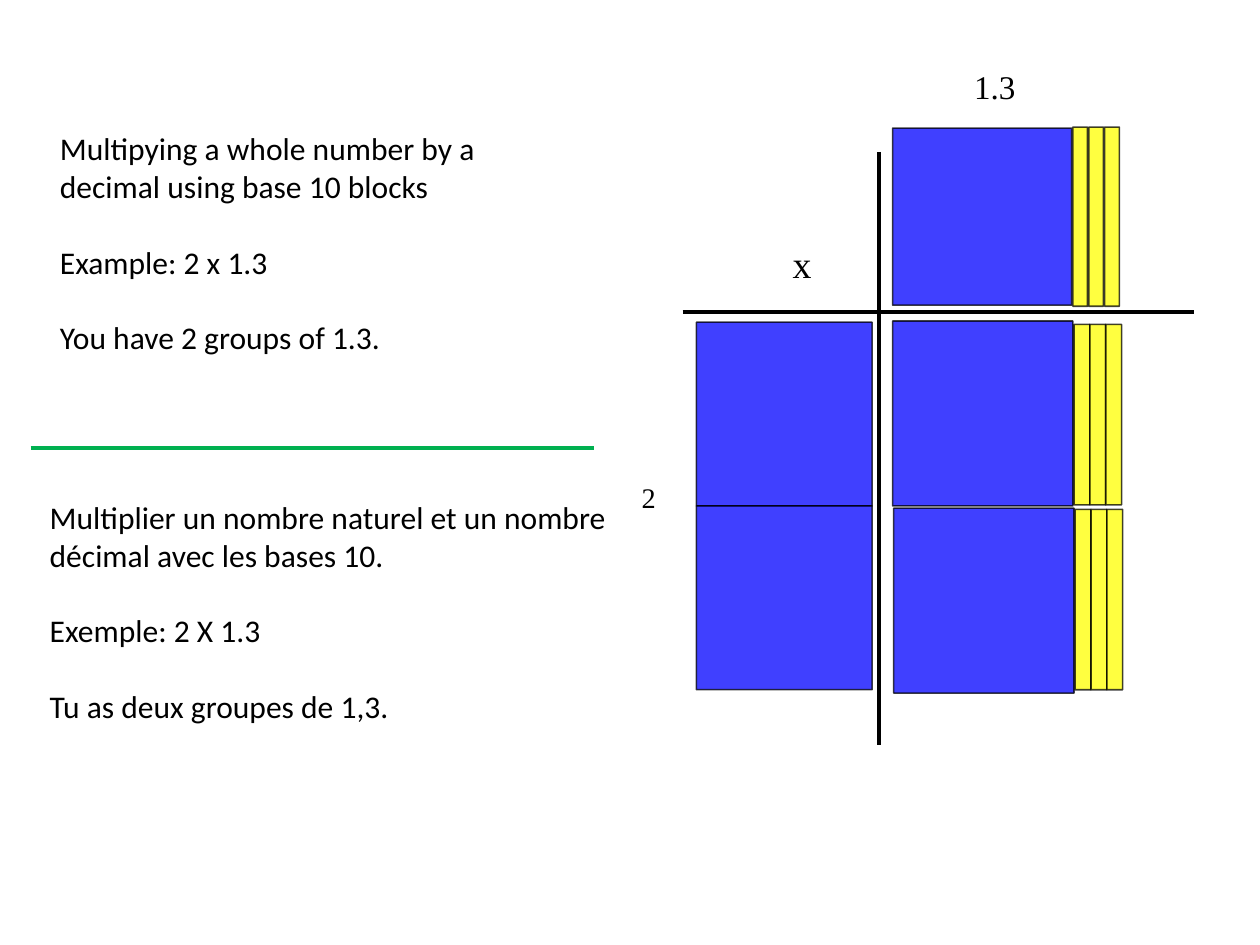
from pptx import Presentation
from pptx.dml.color import RGBColor
from pptx.enum.shapes import MSO_CONNECTOR, MSO_SHAPE
from pptx.oxml.ns import qn
from pptx.util import Inches, Pt
from lxml.etree import SubElement

# Content: left, top, width, height, size, font, paragraphs
TEXTS = [
    (0.43, 1.09, 4.44, 2.46, 20, "Calibri", [
        "Multipying a whole number by a decimal using base 10 blocks",
        "Example: 2 x 1.3",
        "You have 2 groups of 1.3."]),
    (0.34, 4.34, 5.56, 2.12, 20, "Calibri", [
        "Multiplier un nombre naturel et un nombre décimal avec les bases 10.",
        "Exemple: 2 X 1.3",
        "Tu as deux groupes de 1,3."]),
    (6.89, 2.07, 0.97, 0.5, 24, "Times New Roman", ["x"]),
    (8.49, 0.54, 1.22, 0.45, 21, "Times New Roman", ["1.3"]),
    (5.56, 4.18, 0.78, 0.4, 18, "Times New Roman", ["2"]),
]
# Lines: start x, start y, end x, end y, colour
LINES = [
    (6.02, 2.75, 10.53, 2.75, "000000"),
    (7.75, 1.34, 7.75, 6.57, "000000"),
    (0.27, 3.95, 5.24, 3.95, "00B050"),
]
# Blocks: left, top, width, height
ONES = [
    (7.87, 1.13, 1.58, 1.56),
    (6.14, 2.84, 1.55, 1.62),
    (6.14, 4.46, 1.55, 1.62),
    (7.87, 2.83, 1.59, 1.63),
    (7.88, 4.48, 1.59, 1.63),
]
# First rod of each group of tenths
TENTHS = [
    (9.46, 1.12, 0.13, 1.58),
    (9.47, 2.86, 0.14, 1.59),
    (9.48, 4.49, 0.14, 1.59),
]
RODS, STEP = 3, 0.14
BLUE, YELLOW, BLACK = "0000FF", "FFFF00", "000000"
ALPHA = "75000"

deck = Presentation()
deck.slide_width, deck.slide_height = Inches(11.11), Inches(8.33)
slide = deck.slides.add_slide(deck.slide_layouts[6])
shapes = slide.shapes


def paint(form, hue, alpha=None):
    form.solid()
    form.fore_color.rgb = RGBColor.from_string(hue)
    return form


def fade(node):
    for tint in node.iter(qn("a:srgbClr")):
        SubElement(tint, qn("a:alpha")).set("val", ALPHA)


def add_line(x1, y1, x2, y2, hue):
    line = shapes.add_connector(
        MSO_CONNECTOR.STRAIGHT, *map(Inches, (x1, y1, x2, y2)))
    paint(line.line.fill, hue)
    line.line.width = Pt(3)
    SubElement(line._element.spPr, qn("a:effectLst"))


def add_block(box, hue):
    block = shapes.add_shape(MSO_SHAPE.RECTANGLE, *map(Inches, box))
    block.shadow.inherit = False
    paint(block.fill, hue)
    paint(block.line.fill, BLACK)
    block.line.width = Pt(1)
    fade(block._element.spPr)


def add_text(box, size, font, paras):
    frame = shapes.add_textbox(*map(Inches, box)).text_frame
    frame.word_wrap = True
    frame.text = "\n".join(paras)
    for i, para in enumerate(frame.paragraphs):
        para.space_before = Pt(24 if i else 0)
        for run in para.runs:
            run.font.size, run.font.name = Pt(size), font
            paint(run.font.fill, BLACK)


# Axes and divider
for line in LINES:
    add_line(*line)

# Base 10 blocks
for box in ONES:
    add_block(box, BLUE)
for left, *rest in TENTHS:
    for i in range(RODS):
        add_block((left + i * STEP, *rest), YELLOW)

# Text
for *box, size, font, paras in TEXTS:
    add_text(box, size, font, paras)

deck.save("out.pptx")
